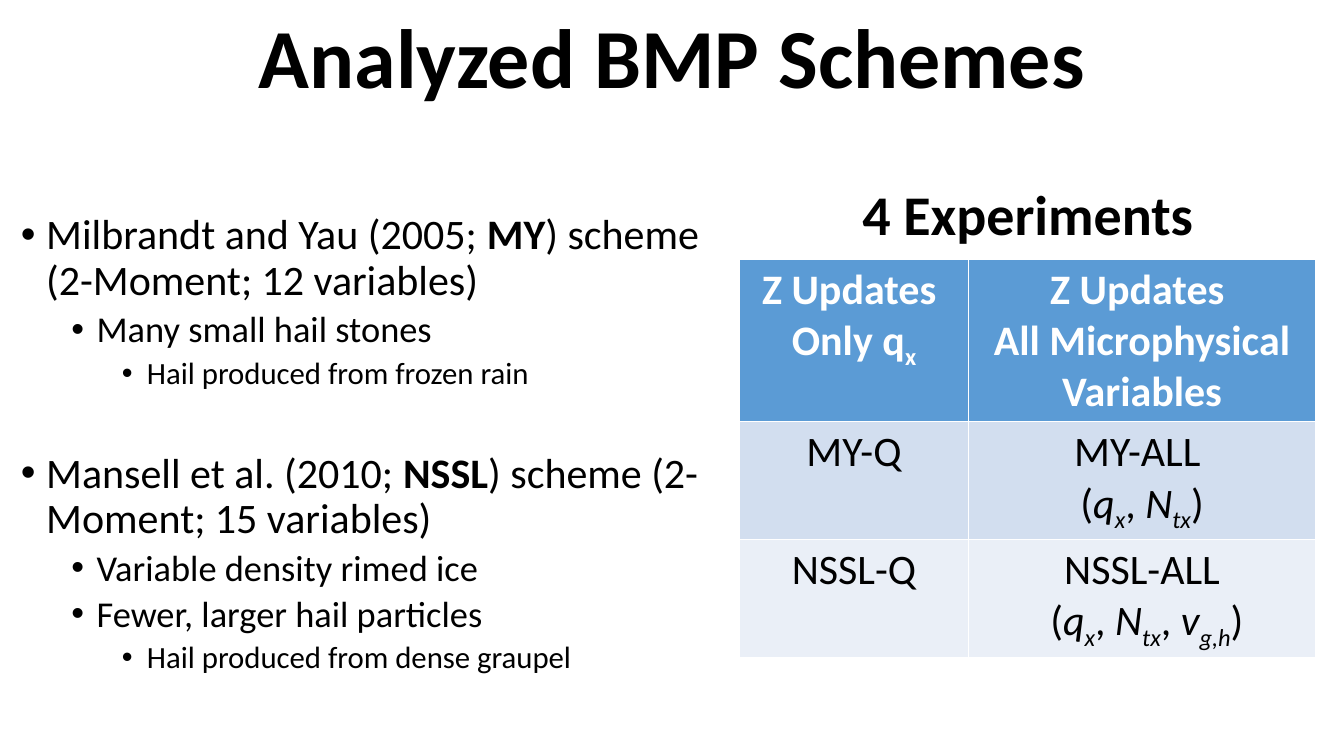
from lxml.etree import SubElement
from pptx import Presentation
from pptx.dml.color import RGBColor
from pptx.enum.text import MSO_ANCHOR, PP_ALIGN
from pptx.oxml.ns import qn
from pptx.util import Cm, Pt

# Content: a line is a list of (text, style); b bold, i italic, s subscript
TITLE = [("Analyzed BMP Schemes", "")]
HEAD = [("4 Experiments", "")]
# (level, space before, runs)
POINTS = [
    (0, 0, [("Milbrandt and Yau (2005; ", ""), ("MY", "b"),
            (") scheme (2-Moment; 12 variables)", "")]),
    (1, 5, [("Many small hail stones", "")]),
    (2, 5, [("Hail produced from frozen rain", "")]),
    (0, 43.6, [("Mansell et al. (2010; ", ""), ("NSSL", "b"),
               (") scheme (2-Moment; 15 variables)", "")]),
    (1, 5, [("Variable density rimed ice", "")]),
    (1, 5, [("Fewer, larger hail particles", "")]),
    (2, 5, [("Hail produced from dense graupel", "")]),
]
MASS = [("q", "i"), ("x", "is"), (", ", ""), ("N", "i"), ("tx", "is")]
CELLS = [
    [[[("Z Updates ", "")], [("Only q", ""), ("x", "s")]],
     [[("Z Updates ", "")], [("All Microphysical Variables", "")]]],
    [[[("MY-Q", "")]],
     [[("MY-ALL ", "")], [("(", ""), *MASS, (")", "")]]],
    [[[("NSSL-Q", "")]],
     [[("NSSL-ALL", "")],
      [(" (", ""), *MASS, (", ", ""), ("v", "i"), ("g,h", "is"), (")", "")]]],
]

# Style
FONT = "Calibri"
BLACK = RGBColor(0x00, 0x00, 0x00)
WHITE = RGBColor(0xFF, 0xFF, 0xFF)
FILLS = [RGBColor(0x5B, 0x9B, 0xD5), RGBColor(0xD2, 0xDE, 0xEF),
         RGBColor(0xEA, 0xEF, 0xF7)]
SIZES = [30, 26, 22]
COLS = [Cm(5.76), Cm(8.76)]
ROWS = [Cm(4.1), Cm(2.97), Cm(2.97)]
LEFT, WIDTH = Cm(18.64), sum(COLS)


def write(para, runs, size, color=BLACK, bold=False, align=PP_ALIGN.CENTER):
    para.alignment = align
    font = para.font
    font.name, font.size, font.bold = FONT, Pt(size), bold
    font.color.rgb = color
    for text, style in runs:
        run = para.add_run()
        run.text = text
        font = run.font
        font.name, font.size, font.bold = FONT, Pt(size), bold or "b" in style
        font.color.rgb = color
        if "i" in style:
            font.italic = True
        if "s" in style:
            run._r.get_or_add_rPr().set("baseline", "-25000")


def add_box(left, top, width, height):
    frame = slide.shapes.add_textbox(left, top, width, height).text_frame
    frame.word_wrap = True
    return frame


def lines(frame, count):
    return [frame.paragraphs[0]] + [frame.add_paragraph() for _ in range(count - 1)]


def bullet(para, level):
    props = para._p.get_or_add_pPr()
    props.set("marL", str(Cm(0.635 + 1.27 * level)))
    props.set("indent", str(-Cm(0.635)))
    SubElement(props, qn("a:buFont"), typeface="Arial")
    SubElement(props, qn("a:buChar"), char="•")


deck = Presentation()
deck.slide_width, deck.slide_height = Cm(33.867), Cm(19.05)
slide = deck.slides.add_slide(deck.slide_layouts[6])

# Title
frame = add_box(0, Cm(-0.3), deck.slide_width, Cm(3.68))
frame.vertical_anchor = MSO_ANCHOR.MIDDLE
frame.paragraphs[0].line_spacing = 0.9
write(frame.paragraphs[0], TITLE, 60, bold=True)

# Schemes
frame = add_box(Cm(0.28), Cm(5.26), Cm(17.65), Cm(12.09))
for para, (level, gap, runs) in zip(lines(frame, len(POINTS)), POINTS):
    para.line_spacing, para.space_before = 0.9, Pt(gap)
    bullet(para, level)
    write(para, runs, SIZES[level], align=PP_ALIGN.LEFT)

# Experiments
table = slide.shapes.add_table(len(ROWS), len(COLS), LEFT, Cm(6.53),
                               WIDTH, sum(ROWS)).table
for col, width in zip(table.columns, COLS):
    col.width = width
for row, height, fill, texts in zip(table.rows, ROWS, FILLS, CELLS):
    row.height = height
    top = fill == FILLS[0]
    for cell, text in zip(row.cells, texts):
        cell.fill.solid()
        cell.fill.fore_color.rgb = fill
        for para, runs in zip(lines(cell.text_frame, len(text)), text):
            write(para, runs, 30, WHITE if top else BLACK, top)

# Table heading
frame = add_box(LEFT, Cm(4.39), WIDTH, Cm(1.96))
write(frame.paragraphs[0], HEAD, 40, bold=True)

deck.save("out.pptx")
